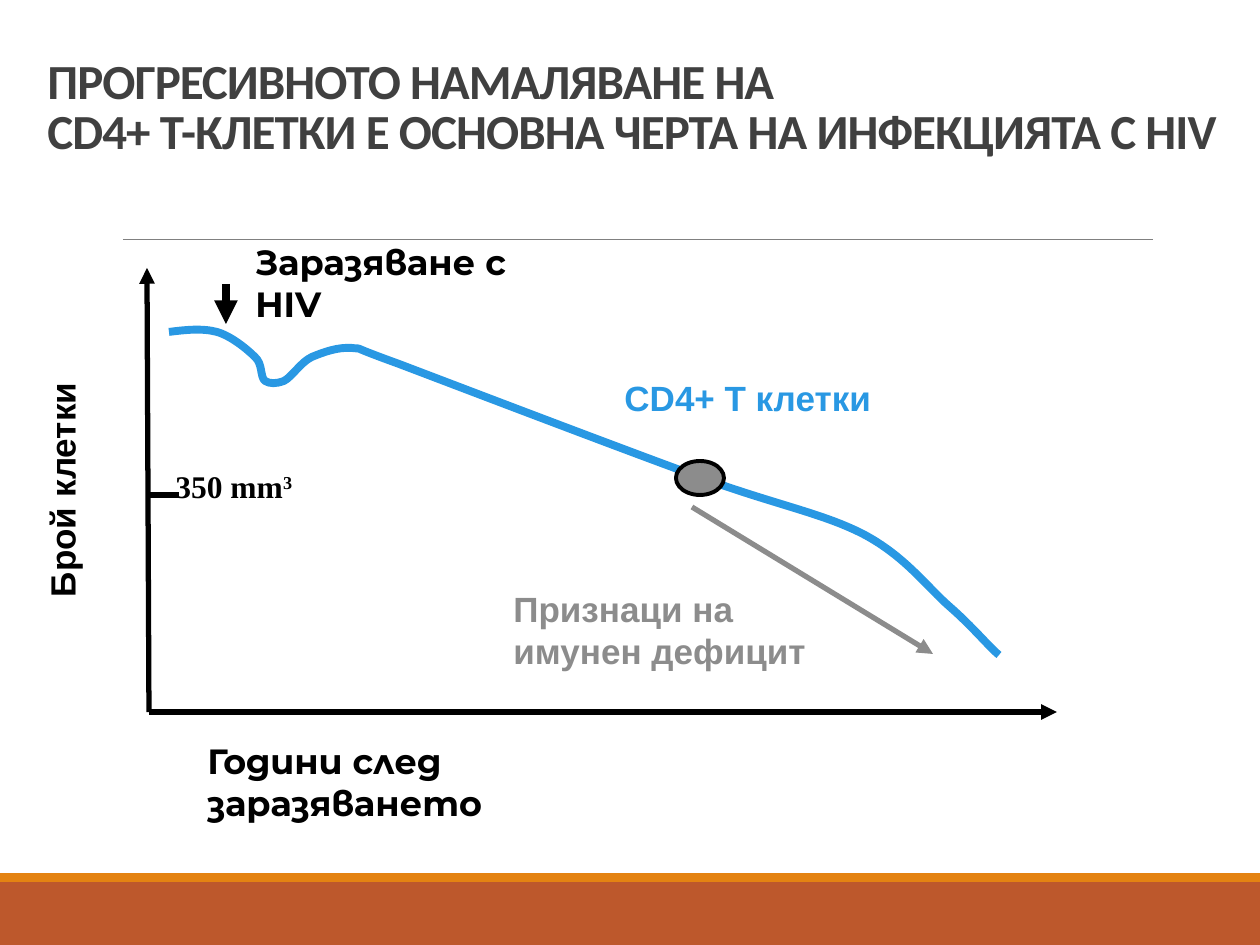
from dataclasses import dataclass
from typing import NamedTuple

from pptx import Presentation
from pptx.dml.color import RGBColor
from pptx.enum.lang import MSO_LANGUAGE_ID as Language
from pptx.enum.shapes import MSO_CONNECTOR as Link, MSO_SHAPE as Preset
from pptx.enum.text import MSO_ANCHOR as Anchor
from pptx.oxml.ns import qn
from pptx.util import Emu, Pt
from lxml.etree import SubElement

PX = 914400 / 126


@dataclass(frozen=True)
class Theme:
    ink: str = "000000"
    title: str = "404040"
    cells: str = "2998E3"
    deficit: str = "8C8C8C"
    rule: str = "808080"
    footer: str = "BD582C"
    footer_edge: str = "E48312"
    title_size: int = 28
    label_size: int = 20
    count_size: int = 18
    thin: float = 0.5
    outline: float = 2.25
    axis: float = 3
    heavy: float = 4.5


THEME = Theme()


class Box(NamedTuple):
    left: int
    top: int
    width: int
    height: int


class Line(NamedTuple):
    start: tuple[int, int]
    end: tuple[int, int]
    color: str
    weight: float
    arrow: bool = False


class Label(NamedTuple):
    box: Box
    lines: tuple[str, ...]
    font: str = "Arial"
    color: str = THEME.ink
    size: int = THEME.label_size
    wrap: bool = False
    rotation: int = 0
    superscript: str = ""


def px(length: int) -> Emu:
    return Emu(round(length * PX))


def rgb(color: str) -> RGBColor:
    return RGBColor.from_string(color)


def add_preset(shapes, preset, box: Box, fill: str, outline: str = ""):
    shape = shapes.add_shape(preset, *map(px, box))
    shape.shadow.inherit = False
    shape.fill.solid()
    shape.fill.fore_color.rgb = rgb(fill)
    if outline:
        shape.line.color.rgb = rgb(outline)
        shape.line.width = Pt(THEME.outline)
    else:
        shape.line.fill.background()


def add_line(shapes, line: Line):
    connector = shapes.add_connector(
        Link.STRAIGHT, *map(px, line.start + line.end))
    connector.line.color.rgb = rgb(line.color)
    connector.line.width = Pt(line.weight)
    if line.arrow:
        SubElement(connector.line._get_or_add_ln(), qn("a:tailEnd"), type="triangle")
    SubElement(connector._element.spPr, qn("a:effectLst"))


def add_run(paragraph, text: str, label: Label):
    run = paragraph.add_run()
    run.text = text
    run.font.name = label.font
    run.font.size = Pt(label.size)
    run.font.bold = True
    run.font.color.rgb = rgb(label.color)
    run.font.language_id = Language.BULGARIAN
    return run


def add_label(shapes, label: Label):
    text_box = shapes.add_textbox(*map(px, label.box))
    text_box.rotation = label.rotation
    text_box.text_frame.word_wrap = label.wrap
    paragraph = text_box.text_frame.paragraphs[0]
    for number, text in enumerate(label.lines):
        if number:
            paragraph.add_line_break()
        add_run(paragraph, text, label)
    if label.superscript:
        raised = add_run(paragraph, label.superscript, label)
        raised.font._element.set("baseline", "30000")
    return text_box


def add_curve(shapes, start, segments, color: str, weight: float):
    """Draw joined cubic Bezier segments, each two control points and an end."""
    builder = shapes.build_freeform(*map(px, start))
    builder.add_line_segments(
        [tuple(map(px, point)) for segment in segments for point in segment],
        close=False)
    curve = builder.convert_to_shape()

    # Join every three straight steps into one Bezier step
    steps = list(curve._element.iter(qn("a:lnTo")))
    outline = steps[0].getparent()
    for first in range(0, len(steps), 3):
        bezier = SubElement(outline, qn("a:cubicBezTo"))
        for step in steps[first:first + 3]:
            bezier.append(step[0])
            outline.remove(step)

    curve.shadow.inherit = False
    curve.fill.background()
    curve.line.color.rgb = rgb(color)
    curve.line.width = Pt(weight)


TITLE = Label(
    Box(35, 45, 1225, 179),
    ("ПРОГРЕСИВНОТО НАМАЛЯВАНЕ НА",
     "CD4+ Т-КЛЕТКИ Е ОСНОВНА ЧЕРТА НА ИНФЕКЦИЯТА С HIV"),
    "Calibri", THEME.title, THEME.title_size, wrap=True)

LABELS = [
    Label(Box(-63, 457, 250, 55), ("Брой клетки",), rotation=270),
    Label(Box(195, 733, 491, 54), ("Години след заразяването",), "Montserrat", wrap=True),
    Label(Box(243, 234, 324, 54), ("Заразяване с HIV",), "Montserrat", wrap=True),
    Label(Box(612, 370, 272, 54), ("CD4+ T клетки",), color=THEME.cells),
    Label(Box(501, 581, 318, 97), ("Признаци на ", "имунен дефицит"),
          color=THEME.deficit),
    Label(Box(163, 461, 144, 50), ("350 mm",), "Times New Roman",
          size=THEME.count_size, superscript="3"),
]

RULE = Line((123, 239), (1153, 239), THEME.rule, THEME.thin)
AXES = [
    Line((149, 712), (147, 268), THEME.ink, THEME.axis, arrow=True),
    Line((149, 712), (1057, 712), THEME.ink, THEME.axis, arrow=True),
    Line((147, 495), (179, 495), THEME.ink, THEME.axis),
]
INFECTION = Line((226, 284), (226, 324), THEME.ink, THEME.heavy, arrow=True)
DEFICIT = Line((692, 507), (933, 654), THEME.deficit, THEME.axis, arrow=True)

CURVE_START = (169, 332)
CURVE = [
    ((185, 330), (202, 328), (217, 332)),
    ((231, 336), (247, 349), (255, 357)),
    ((263, 364), (260, 377), (265, 381)),
    ((270, 384), (276, 384), (284, 381)),
    ((292, 377), (301, 362), (312, 357)),
    ((324, 352), (338, 347), (352, 348)),
    ((367, 350), (341, 343), (399, 364)),
    ((457, 386), (622, 449), (699, 477)),
    ((776, 505), (822, 513), (863, 534)),
    ((905, 556), (927, 587), (950, 607)),
    ((973, 627), (990, 648), (999, 655)),
]


def main():
    deck = Presentation()
    deck.slide_width, deck.slide_height = px(1260), px(945)
    shapes = deck.slides.add_slide(deck.slide_layouts[6]).shapes

    # Footer bands and title rule
    add_preset(shapes, Preset.RECTANGLE, Box(0, 882, 1260, 63), THEME.footer)
    add_preset(shapes, Preset.RECTANGLE, Box(0, 873, 1260, 9), THEME.footer_edge)
    add_line(shapes, RULE)

    # Title, raised above the rule by its bottom margin
    title = add_label(shapes, TITLE).text_frame
    title.vertical_anchor = Anchor.BOTTOM
    title.margin_bottom = px(64)
    title.paragraphs[0].line_spacing = 0.85
    for run in title.paragraphs[0].runs:
        run.font._element.set("spc", "-50")

    # Cell count over time
    for axis in AXES:
        add_line(shapes, axis)
    add_curve(shapes, CURVE_START, CURVE, THEME.cells, THEME.heavy)
    add_line(shapes, INFECTION)
    add_preset(shapes, Preset.OVAL, Box(676, 461, 48, 34), THEME.deficit, THEME.ink)
    add_line(shapes, DEFICIT)
    for label in LABELS:
        add_label(shapes, label)

    deck.save("out.pptx")


if __name__ == "__main__":
    main()
